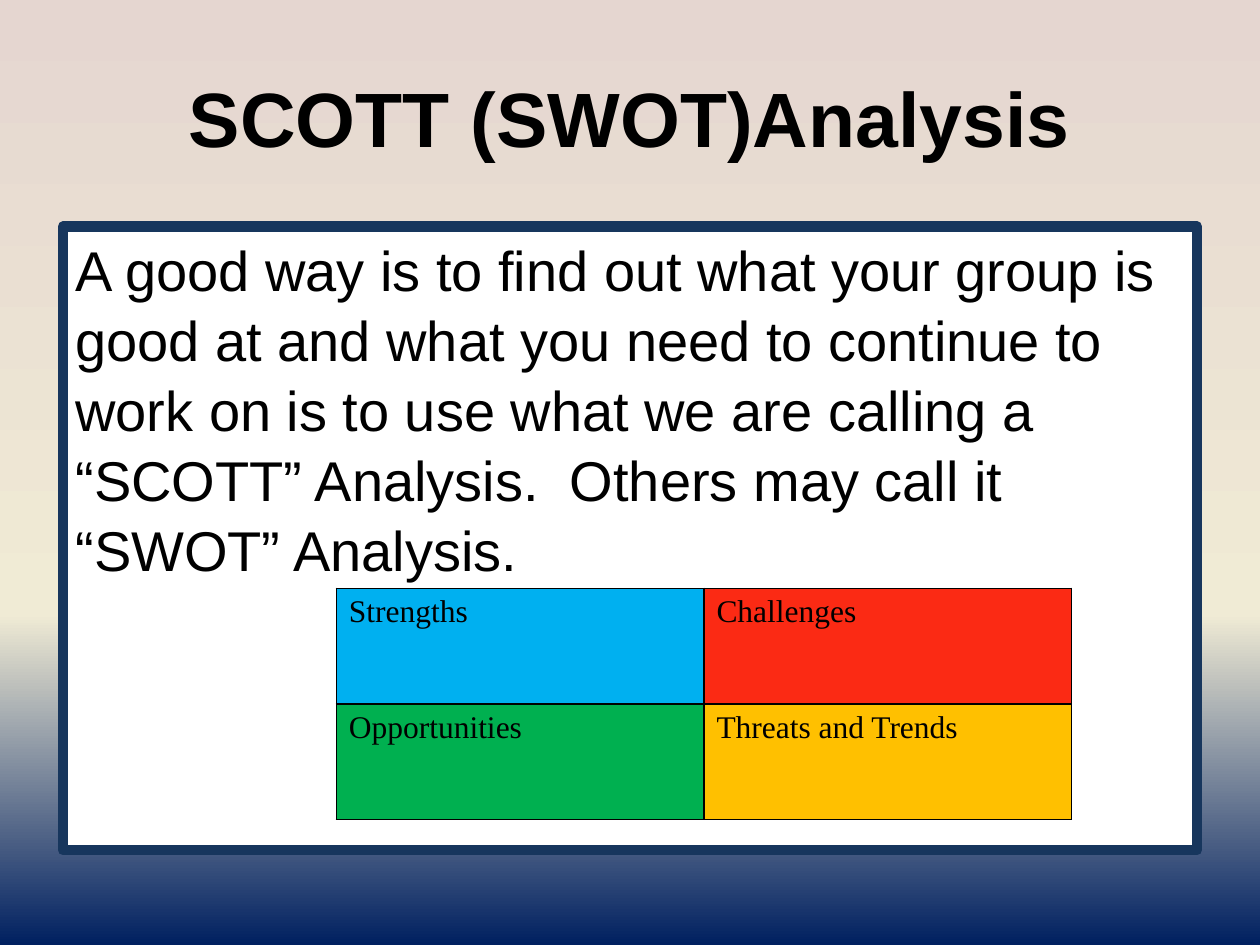
import copy

import lxml.etree
import pptx
import pptx.dml.color
import pptx.enum.shapes
import pptx.enum.text
import pptx.oxml
import pptx.oxml.ns
import pptx.util

Cm, Pt = pptx.util.Cm, pptx.util.Pt
PP_ALIGN, ANCHOR = pptx.enum.text.PP_ALIGN, pptx.enum.text.MSO_ANCHOR
qn = pptx.oxml.ns.qn

BACKGROUND = [(0, "E5D6D0"), (0.65, "F0EBD5"), (1, "002060")]
QUADRANTS = [
    [("Strengths", "00B0F0"), ("Challenges", "FB2A14")],
    [("Opportunities", "00B050"), ("Threats and Trends", "FFC000")],
]
BODY = (
    "A good way is to find out what your group is good at and what you need to "
    "continue to work on is to use what we are calling a “SCOTT” Analysis.  "
    "Others may call it “SWOT” Analysis."
)


def rgb(value):
    return pptx.dml.color.RGBColor.from_string(value)


def write(tf, text, font, paragraph=None):
    p = tf.paragraphs[0]
    for name, value in (paragraph or {}).items():
        setattr(p, name, value)
    r = p.add_run()
    r.text = text
    for name, value in font.items():
        setattr(r.font, name, value)
    r.font.color.rgb = rgb("000000")


def paint_background(s):
    fill = s.background.fill
    fill.gradient()
    fill.gradient_angle = 270
    stops = s.element.find(".//" + qn("a:gsLst"))
    stops.append(copy.deepcopy(stops[-1]))
    for stop, (position, color) in zip(fill.gradient_stops, BACKGROUND):
        stop.position = position
        stop.color.rgb = rgb(color)


def add_title(s, x, y, w, h):
    tf = s.shapes.add_textbox(x, y, w, h).text_frame
    tf.word_wrap = True
    tf.vertical_anchor = ANCHOR.MIDDLE
    write(tf, "SCOTT (SWOT)Analysis", {"name": "Arial", "size": Pt(44), "bold": True},
          {"alignment": PP_ALIGN.CENTER})


def add_body(s, x, y, w, h):
    sp = s.shapes.add_shape(pptx.enum.shapes.MSO_SHAPE.RECTANGLE, x, y, w, h)
    sp.shadow.inherit = False
    sp.fill.solid()
    sp.fill.fore_color.rgb = rgb("FFFFFF")
    sp.line.color.rgb = rgb("17365D")
    sp.line.width = Pt(6)
    lxml.etree.SubElement(sp.element.spPr.find(qn("a:ln")), qn("a:round"))
    tf = sp.text_frame
    tf.word_wrap = True
    tf.vertical_anchor = ANCHOR.TOP
    write(tf, BODY, {"name": "Arial", "size": Pt(32)},
          {"alignment": PP_ALIGN.LEFT, "line_spacing": 1.04, "space_before": Pt(2)})


def add_borders(cell, color, width):
    tc_pr = cell._tc.get_or_add_tcPr()
    for i, side in enumerate(("lnL", "lnR", "lnT", "lnB")):
        tc_pr.insert(i, pptx.oxml.parse_xml(
            f'<a:{side} {pptx.oxml.ns.nsdecls("a")} w="{width}"><a:solidFill>'
            f'<a:srgbClr val="{color}"/></a:solidFill></a:{side}>'))


def add_quadrants(s, x, y, w, h):
    table = s.shapes.add_table(len(QUADRANTS), len(QUADRANTS[0]), x, y, w, h).table
    table.first_row = table.horz_banding = False
    for i, row in enumerate(QUADRANTS):
        for j, (label, color) in enumerate(row):
            cell = table.cell(i, j)
            cell.fill.solid()
            cell.fill.fore_color.rgb = rgb(color)
            add_borders(cell, "000000", Pt(1))
            write(cell.text_frame, label, {"name": "Times New Roman", "size": Pt(18)})


def main():
    prs = pptx.Presentation()
    prs.slide_width, prs.slide_height = Cm(25.4), Cm(19.05)
    s = prs.slides.add_slide(prs.slide_layouts[6])
    paint_background(s)
    add_title(s, Cm(1.27), Cm(0.76), Cm(22.86), Cm(3.18))
    add_body(s, Cm(1.27), Cm(4.57), Cm(22.86), Cm(12.57))
    add_quadrants(s, Cm(6.78), Cm(11.86), Cm(14.82), Cm(4.66))
    prs.save("out.pptx")


if __name__ == "__main__":
    main()
